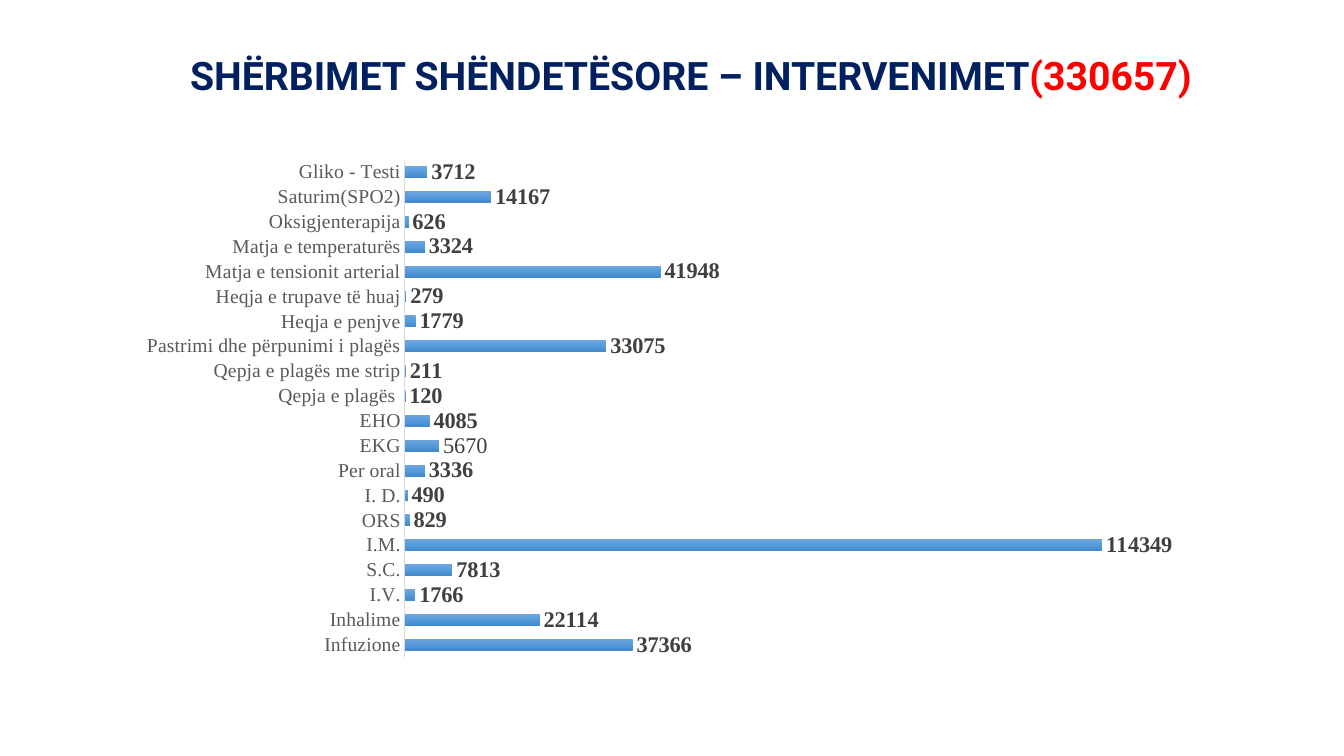
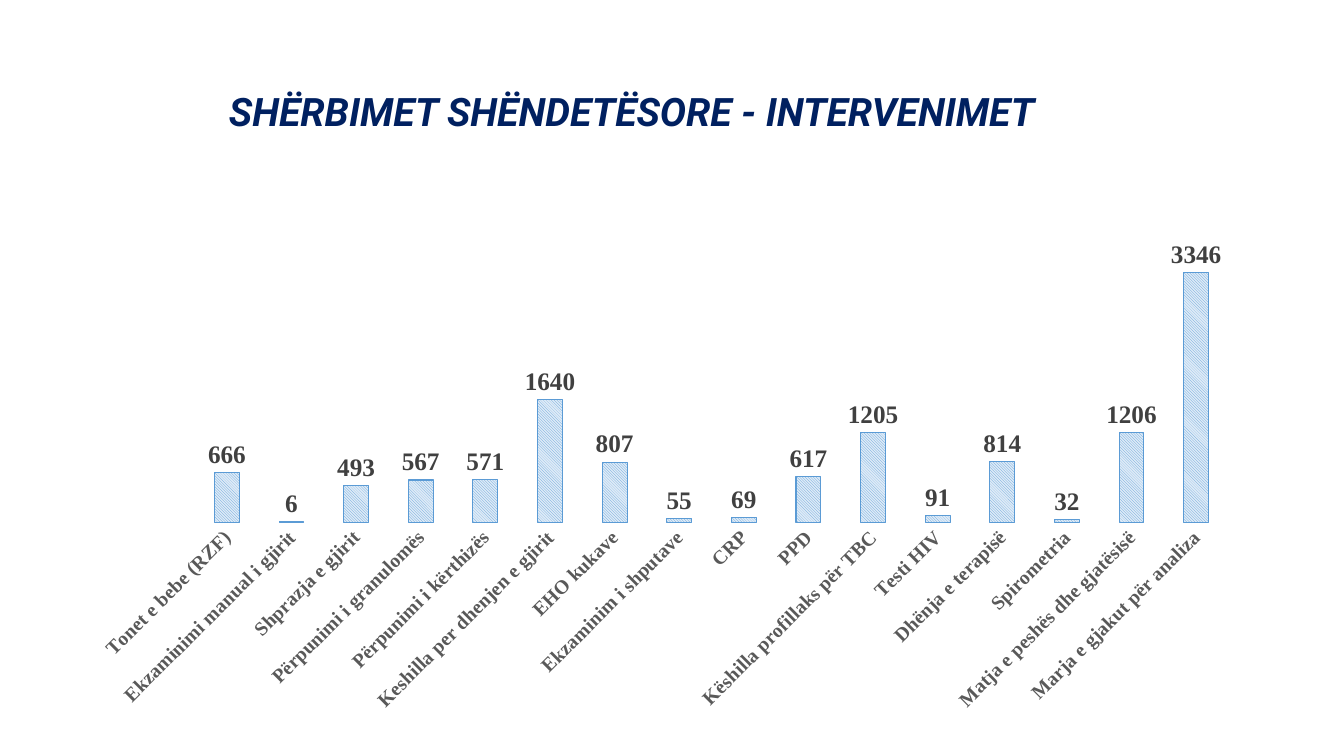
from copy import deepcopy
from dataclasses import dataclass
from typing import Callable, Optional

from pptx import Presentation
from pptx.chart.chart import Chart
from pptx.chart.data import CategoryChartData
from pptx.chart.series import BarSeries
from pptx.dml.color import RGBColor
from pptx.enum.chart import XL_CHART_TYPE as ChartType
from pptx.enum.chart import XL_LABEL_POSITION as LabelPosition
from pptx.enum.chart import XL_TICK_MARK as TickMark
from pptx.enum.dml import MSO_PATTERN as Pattern
from pptx.enum.text import MSO_ANCHOR as Anchor
from pptx.enum.text import MSO_AUTO_SIZE as AutoSize
from pptx.enum.text import PP_ALIGN as Align
from pptx.oxml.ns import qn
from pptx.slide import Slide
from pptx.text.text import Font
from pptx.util import Cm, Pt

NAVY = RGBColor(0x00, 0x20, 0x60)
RED = RGBColor(0xFF, 0x00, 0x00)
BLACK = RGBColor(0x00, 0x00, 0x00)
LABEL_GREY = RGBColor(0x40, 0x40, 0x40)
AXIS_GREY = RGBColor(0x59, 0x59, 0x59)
LINE_GREY = RGBColor(0xD9, 0xD9, 0xD9)
BLUE = RGBColor(0x5B, 0x9B, 0xD5)
PALE_BLUE = RGBColor(0xDE, 0xEB, 0xF7)
GRADIENT = (
    RGBColor(0x71, 0xA6, 0xDB),
    RGBColor(0x55, 0x9B, 0xDB),
    RGBColor(0x44, 0x8A, 0xCA),
)

TITLE_FONT = "Roboto"
CHART_FONT = "Times New Roman"
BASE_FONT = "Calibri"
TITLE_LEFT, TITLE_WIDTH = Cm(2.34), Cm(29.21)


@dataclass(frozen=True)
class Title:
    text: str
    top: Cm
    height: Cm
    indent: Cm
    total: str = ""
    italic: Optional[bool] = None


@dataclass(frozen=True)
class BarChart:
    kind: ChartType
    left: Cm
    top: Cm
    width: Cm
    height: Cm
    values: dict[str, int]
    axis_maximum: int
    gap: int
    overlap: int
    label_size: Pt
    bold_axis: bool
    paint: Callable[[Chart, BarSeries], None]
    axis_line: Optional[RGBColor] = None
    axis_rotation: int = 0
    light_label: str = ""


def style_font(font: Font, name: str, size: Pt, color: RGBColor, bold: bool) -> None:
    font.name, font.size, font.bold = name, size, bold
    font.color.rgb = color


def paint_gradient(chart: Chart, series: BarSeries) -> None:
    fill = series.format.fill
    fill.gradient()
    fill.gradient_angle = 270
    stop_list = chart.element.find(".//" + qn("a:gsLst"))
    stop_list.insert(1, deepcopy(stop_list[0]))
    for index, (stop, color) in enumerate(zip(fill.gradient_stops, GRADIENT)):
        stop.position = index / (len(GRADIENT) - 1)
        stop.color.rgb = color


def paint_hatching(chart: Chart, series: BarSeries) -> None:
    fill = series.format.fill
    fill.patterned()
    fill.pattern = Pattern.LIGHT_DOWNWARD_DIAGONAL
    fill.fore_color.rgb = BLUE
    fill.back_color.rgb = PALE_BLUE
    series.format.line.color.rgb = BLUE
    series.format.line.width = Pt(0.75)


def add_title(slide: Slide, title: Title) -> None:
    box = slide.shapes.title
    box.left, box.top = TITLE_LEFT, title.top
    box.width, box.height = TITLE_WIDTH, title.height
    frame = box.text_frame
    frame.auto_size = AutoSize.NONE
    frame.vertical_anchor = Anchor.MIDDLE
    frame.margin_left = title.indent
    para = frame.paragraphs[0]
    para.alignment = Align.LEFT
    para.line_spacing = 0.9
    style_font(para.font, TITLE_FONT, Pt(28), NAVY, True)
    para.font.italic = title.italic
    para.add_run().text = title.text
    if title.total:
        span = para.add_run()
        span.text = title.total
        span.font.color.rgb = RED


def style_axes(chart: Chart, design: BarChart) -> None:
    values = chart.value_axis
    values.visible = False
    values.has_major_gridlines = False
    values.minimum_scale, values.maximum_scale = 0, design.axis_maximum
    categories = chart.category_axis
    categories.major_tick_mark = categories.minor_tick_mark = TickMark.NONE
    style_font(categories.tick_labels.font, CHART_FONT, Pt(14), AXIS_GREY,
               design.bold_axis)
    line = categories.format.line
    if design.axis_line is None:
        line.fill.background()
    else:
        line.color.rgb = design.axis_line
        line.width = Pt(1)
    if design.axis_rotation:
        body = chart.element.find(".//" + qn("c:catAx")).find(".//" + qn("a:bodyPr"))
        body.set("rot", str(design.axis_rotation * 60000))
        body.set("vert", "horz")


def style_labels(series: BarSeries, design: BarChart) -> None:
    labels = series.data_labels
    labels.show_value = True
    labels.position = LabelPosition.OUTSIDE_END
    style_font(labels.font, CHART_FONT, design.label_size, LABEL_GREY, True)
    if design.light_label:
        index = list(design.values).index(design.light_label)
        label = series.points[index].data_label
        style_font(label.font, CHART_FONT, design.label_size, LABEL_GREY, False)
        label.position = LabelPosition.OUTSIDE_END


def add_bar_chart(slide: Slide, design: BarChart) -> None:
    data = CategoryChartData()
    data.categories = list(design.values)
    data.add_series("Series 1", list(design.values.values()))
    chart = slide.shapes.add_chart(
        design.kind, design.left, design.top, design.width, design.height, data
    ).chart
    chart.has_legend = chart.has_title = False
    style_font(chart.font, BASE_FONT, Pt(10), BLACK, False)
    style_axes(chart, design)

    plot = chart.plots[0]
    plot.vary_by_categories = False
    plot.gap_width, plot.overlap = design.gap, design.overlap
    series = plot.series[0]
    series.invert_if_negative = False
    design.paint(chart, series)
    style_labels(series, design)


TOTAL_TITLE = Title(
    "SHËRBIMET SHËNDETËSORE – INTERVENIMET",
    top=Cm(0.41), height=Cm(3.1), indent=Cm(2.45), total="(330657)",
)
TOTAL_CHART = BarChart(
    ChartType.BAR_CLUSTERED, Cm(3.12), Cm(3.76), Cm(29.18), Cm(13.06),
    values={
        "Infuzione": 37366,
        "Inhalime": 22114,
        "I.V.": 1766,
        "S.C.": 7813,
        "I.M.": 114349,
        "ORS": 829,
        "I. D.": 490,
        "Per oral": 3336,
        "EKG": 5670,
        "EHO": 4085,
        "Qepja e plagës ": 120,
        "Qepja e plagës me strip": 211,
        "Pastrimi dhe përpunimi i plagës": 33075,
        "Heqja e penjve": 1779,
        "Heqja e trupave të huaj": 279,
        "Matja e tensionit arterial": 41948,
        "Matja e temperaturës": 3324,
        "Oksigjenterapija": 626,
        "Saturim(SPO2)": 14167,
        "Gliko - Testi": 3712,
    },
    axis_maximum=140000, gap=115, overlap=-20, label_size=Pt(16),
    bold_axis=False, paint=paint_gradient, axis_line=LINE_GREY, light_label="EKG",
)
OTHER_TITLE = Title(
    "SHËRBIMET SHËNDETËSORE - INTERVENIMET",
    top=Cm(1.02), height=Cm(3.68), indent=Cm(3.43), italic=True,
)
OTHER_CHART = BarChart(
    ChartType.COLUMN_CLUSTERED, Cm(1.96), Cm(5.38), Cm(29.59), Cm(12.8),
    values={
        "Tonet e bebe (RZF)": 666,
        "Ekzaminimi manual i gjirit": 6,
        "Shprazja e gjirit": 493,
        "Përpunimi i granulomës": 567,
        "Përpunimi i kërthizës": 571,
        "Keshilla per dhenjen e gjirit": 1640,
        "EHO kukave": 807,
        "Ekzaminim i shputave": 55,
        "CRP": 69,
        "PPD": 617,
        "Këshilla profillaks për TBC": 1205,
        "Testi HIV": 91,
        "Dhënja e terapisë": 814,
        "Spirometria": 32,
        "Matja e peshës dhe gjatësisë": 1206,
        "Marja e gjakut për analiza": 3346,
    },
    axis_maximum=4000, gap=160, overlap=0, label_size=Pt(18),
    bold_axis=True, paint=paint_hatching, axis_rotation=-45,
)


def main() -> None:
    deck = Presentation()
    deck.slide_width, deck.slide_height = Cm(33.87), Cm(19.05)
    title_only = deck.slide_layouts[5]
    for title, design in ((TOTAL_TITLE, TOTAL_CHART), (OTHER_TITLE, OTHER_CHART)):
        slide = deck.slides.add_slide(title_only)
        add_title(slide, title)
        add_bar_chart(slide, design)
    deck.save("out.pptx")


if __name__ == "__main__":
    main()
